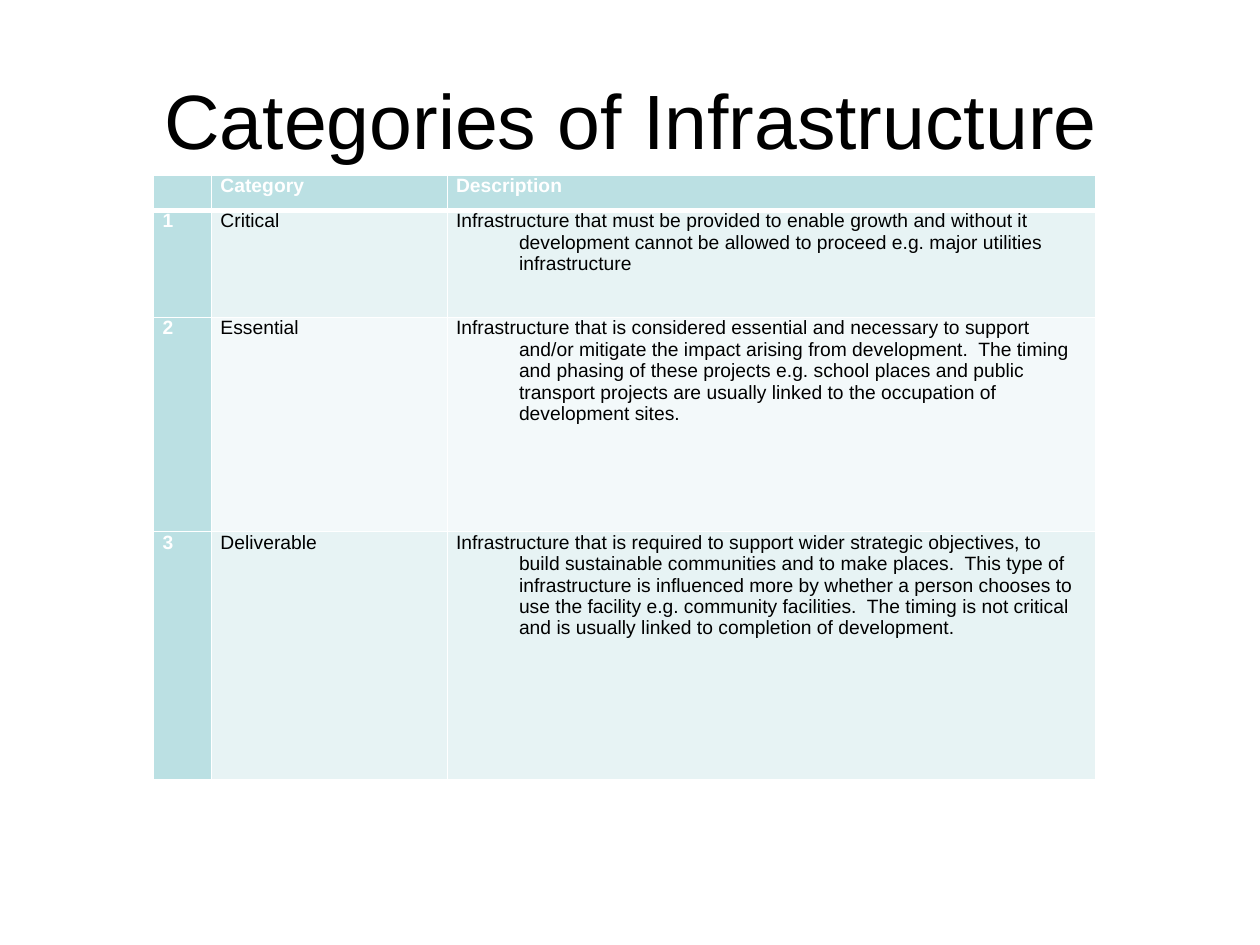
from dataclasses import dataclass

from lxml import etree
from pptx import Presentation
from pptx import util as u
from pptx.dml.color import RGBColor
from pptx.enum import text
from pptx.oxml.ns import qn

COLORS = {
    "header": "BBE0E3",
    "odd": "E7F3F4",
    "even": "F3F9FA",
    "white": "FFFFFF",
    "black": "000000",
}
FONT = "Arial"
COL_WIDTHS = (0.46, 1.87, 5.15)
ROW_HEIGHTS = (0.28, 0.85, 1.7, 1.97)


@dataclass
class Category:
    number: str
    name: str
    description: str


CATEGORIES = [
    Category("", "Category", "Description"),
    Category(
        "1", "Critical",
        "Infrastructure that must be provided to enable growth and without it "
        "development cannot be allowed to proceed e.g. major utilities "
        "infrastructure",
    ),
    Category(
        "2", "Essential",
        "Infrastructure that is considered essential and necessary to support "
        "and/or mitigate the impact arising from development.  The timing and "
        "phasing of these projects e.g. school places and public transport "
        "projects are usually linked to the occupation of development sites.",
    ),
    Category(
        "3", "Deliverable",
        "Infrastructure that is required to support wider strategic "
        "objectives, to build sustainable communities and to make places.  "
        "This type of infrastructure is influenced more by whether a person "
        "chooses to use the facility e.g. community facilities.  The timing "
        "is not critical and is usually linked to completion of development.",
    ),
]


def rgb(name: str) -> RGBColor:
    return RGBColor.from_string(COLORS[name])


def set_font(p, size: float, color: str, bold: bool) -> None:
    p.font.name = FONT
    p.font.size = u.Pt(size)
    p.font.bold = bold
    p.font.color.rgb = rgb(color)


def set_borders(cell, top: float, bottom: float) -> None:
    tcPr = cell._tc.get_or_add_tcPr()
    widths = {"lnL": 1, "lnR": 1, "lnT": top, "lnB": bottom}
    for i, (tag, width) in enumerate(widths.items()):
        ln = etree.Element(qn(f"a:{tag}"), w=str(u.Pt(width)))
        fill = etree.SubElement(ln, qn("a:solidFill"))
        etree.SubElement(fill, qn("a:srgbClr"), val=COLORS["white"])
        tcPr.insert(i, ln)


def fill_cell(cell, value: str, row: int, col: int) -> None:
    heading = row == 0 or col == 0
    cell.margin_left = cell.margin_right = u.Inches(0.07)
    cell.margin_top = cell.margin_bottom = 0
    cell.fill.solid()
    band = "odd" if row % 2 else "even"
    cell.fill.fore_color.rgb = rgb("header" if heading else band)
    set_borders(cell, 3 if row == 1 else 1, 3 if row == 0 else 1)
    p = cell.text_frame.paragraphs[0]
    pPr = p._p.get_or_add_pPr()
    pPr.set("marL", str(u.Inches(0.5)))
    pPr.set("indent", str(u.Inches(-0.5)))
    set_font(p, 11, "white" if heading else "black", heading)
    if value:
        p.add_run().text = value
    else:
        etree.SubElement(p._p, qn("a:endParaRPr"), sz="1100")


def add_title(s, value: str) -> None:
    sp = s.shapes.title
    sp.left, sp.top = u.Inches(0.51), u.Inches(0.44)
    sp.width, sp.height = u.Inches(9), u.Inches(1.01)
    tf = sp.text_frame
    tf.text = value
    tf.word_wrap = True
    tf.auto_size = text.MSO_AUTO_SIZE.NONE
    tf.vertical_anchor = text.MSO_ANCHOR.MIDDLE
    p = tf.paragraphs[0]
    p.alignment = text.PP_ALIGN.CENTER
    set_font(p, 44, "black", False)


def add_category_table(s, categories: list[Category]) -> None:
    table = s.shapes.add_table(
        len(ROW_HEIGHTS), len(COL_WIDTHS), u.Inches(1.22), u.Inches(1.39),
        u.Inches(sum(COL_WIDTHS)), u.Inches(sum(ROW_HEIGHTS)),
    ).table
    table.first_col = True
    table.horz_banding = False
    for column, width in zip(table.columns, COL_WIDTHS):
        column.width = u.Inches(width)
    for i, (category, height) in enumerate(zip(categories, ROW_HEIGHTS)):
        table.rows[i].height = u.Inches(height)
        values = (category.number, category.name, category.description)
        for j, value in enumerate(values):
            fill_cell(table.cell(i, j), value, i, j)


def main() -> None:
    prs = Presentation()
    prs.slide_width, prs.slide_height = u.Inches(10), u.Inches(7.5)
    s = prs.slides.add_slide(prs.slide_layouts[5])
    add_title(s, "Categories of Infrastructure")
    add_category_table(s, CATEGORIES)
    prs.save("out.pptx")


if __name__ == "__main__":
    main()
